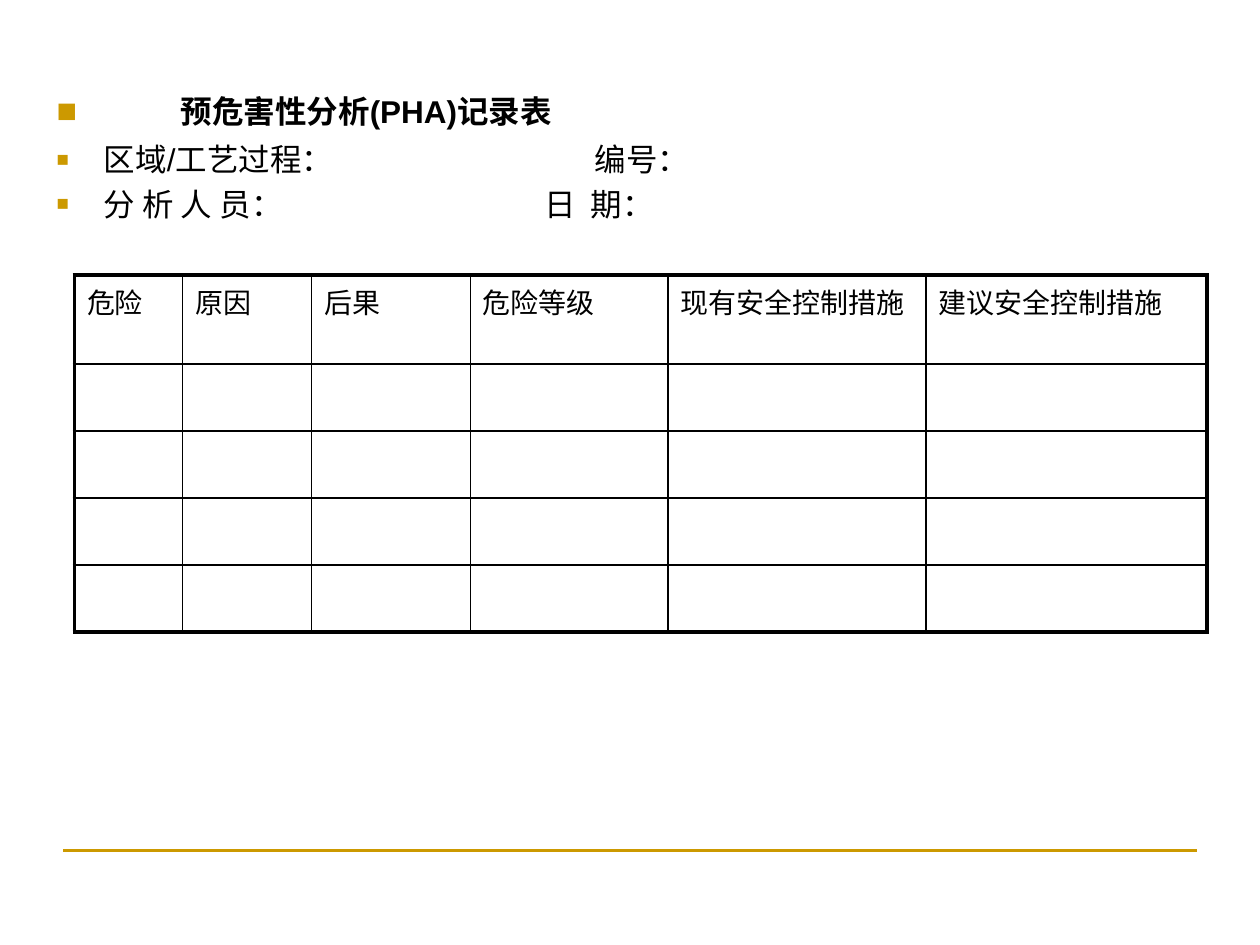
from lxml.etree import SubElement
from pptx import Presentation
from pptx.dml.color import RGBColor
from pptx.enum.shapes import MSO_CONNECTOR
from pptx.enum.text import MSO_AUTO_SIZE
from pptx.oxml import parse_xml
from pptx.oxml.ns import nsdecls, qn
from pptx.util import Cm, Pt

BLACK = RGBColor(0, 0, 0)
GOLD = RGBColor(0xCC, 0x99, 0x00)
FONT = "Arial"
HEADS = ["危险", "原因", "后果", "危险等级", "现有安全控制措施", "建议安全控制措施"]
WIDTHS = [2.18, 2.6, 3.2, 3.99, 5.2, 5.66]
HEIGHTS = [1.8] + [1.35] * 4
LINES = [
    (["预危害性分析(PHA)记录表"], 2.5, 12, 108, []),
    (["区域/工艺过程：", "\t", " 编号：", "\t"], 0.95, 6, 65, [10.7, 16.9]),
    (["分 析 人 员：", "\t", " 日  期：", "\t"], 0.95, 3.6, 65, [9.7, 15.3]),
]


def style(run, size, bold=False):
    font = run.font
    font.name = FONT
    font.size = Pt(size)
    font.bold = bold
    font.color.rgb = BLACK


def add_mark(para, indent, scale, stops):
    props = para._p.get_or_add_pPr()
    props.set("marL", str(Cm(indent)))
    props.set("indent", str(-Cm(indent)))
    color = SubElement(props, qn("a:buClr"))
    SubElement(color, qn("a:srgbClr"), val=str(GOLD))
    SubElement(props, qn("a:buSzPct"), val=str(scale * 1000))
    SubElement(props, qn("a:buFont"), typeface=FONT)
    SubElement(props, qn("a:buChar"), char="■")
    if stops:
        tabs = SubElement(props, qn("a:tabLst"))
        for stop in stops:
            SubElement(tabs, qn("a:tab"), pos=str(Cm(stop)), algn="l")


def fill_form(body, left, top, width, height):
    body.left, body.top = Cm(left), Cm(top)
    body.width, body.height = Cm(width), Cm(height)
    frame = body.text_frame
    frame.auto_size = MSO_AUTO_SIZE.NONE
    for i, (parts, indent, gap, scale, stops) in enumerate(LINES):
        para = frame.add_paragraph() if i else frame.paragraphs[0]
        para.space_before = Pt(gap)
        add_mark(para, indent, scale, stops)
        for part in parts:
            run = para.add_run()
            run.text = part
            style(run, 18, bold=i == 0)
            run.font.underline = part == "\t"


def set_edges(cell, row, col):
    outer = {
        "L": col == 0,
        "R": col == len(WIDTHS) - 1,
        "T": row == 0,
        "B": row == len(HEIGHTS) - 1,
    }
    props = cell._tc.get_or_add_tcPr()
    for i, (side, thick) in enumerate(outer.items()):
        width = Pt(2.25 if thick else 1)
        props.insert(i, parse_xml(
            f'<a:ln{side} {nsdecls("a")} w="{width}"><a:solidFill>'
            f'<a:srgbClr val="{BLACK}"/></a:solidFill></a:ln{side}>'))


def add_grid(slide, left, top):
    table = slide.shapes.add_table(
        len(HEIGHTS), len(WIDTHS), Cm(left), Cm(top),
        Cm(sum(WIDTHS)), Cm(sum(HEIGHTS))).table
    table.first_row = False
    table.horz_banding = False
    for col, width in zip(table.columns, WIDTHS):
        col.width = Cm(width)
    for r, height in enumerate(HEIGHTS):
        table.rows[r].height = Cm(height)
        for c, head in enumerate(HEADS):
            cell = table.cell(r, c)
            cell.fill.background()
            set_edges(cell, r, c)
            if r == 0:
                cell.text_frame.text = head
                para = cell.text_frame.paragraphs[0]
                para.space_before = Pt(3.2)
                style(para.runs[0], 16)


def add_rule(slide, left, top, width):
    rule = slide.shapes.add_connector(
        MSO_CONNECTOR.STRAIGHT, Cm(left), Cm(top), Cm(left + width), Cm(top))
    rule.line.color.rgb = GOLD
    rule.line.width = Pt(1.5)
    SubElement(rule._element.spPr, qn("a:effectLst"))


def main():
    deck = Presentation()
    deck.slide_width, deck.slide_height = Cm(25.4), Cm(19.05)
    slide = deck.slides.add_slide(deck.slide_layouts[1])
    title = slide.shapes.title.element
    title.getparent().remove(title)
    add_rule(slide, 1.27, 17.15, 22.86)
    fill_form(slide.placeholders[1], 0.89, 1.73, 23.8, 15.32)
    add_grid(slide, 1.5, 5.54)
    deck.save("out.pptx")


if __name__ == "__main__":
    main()
